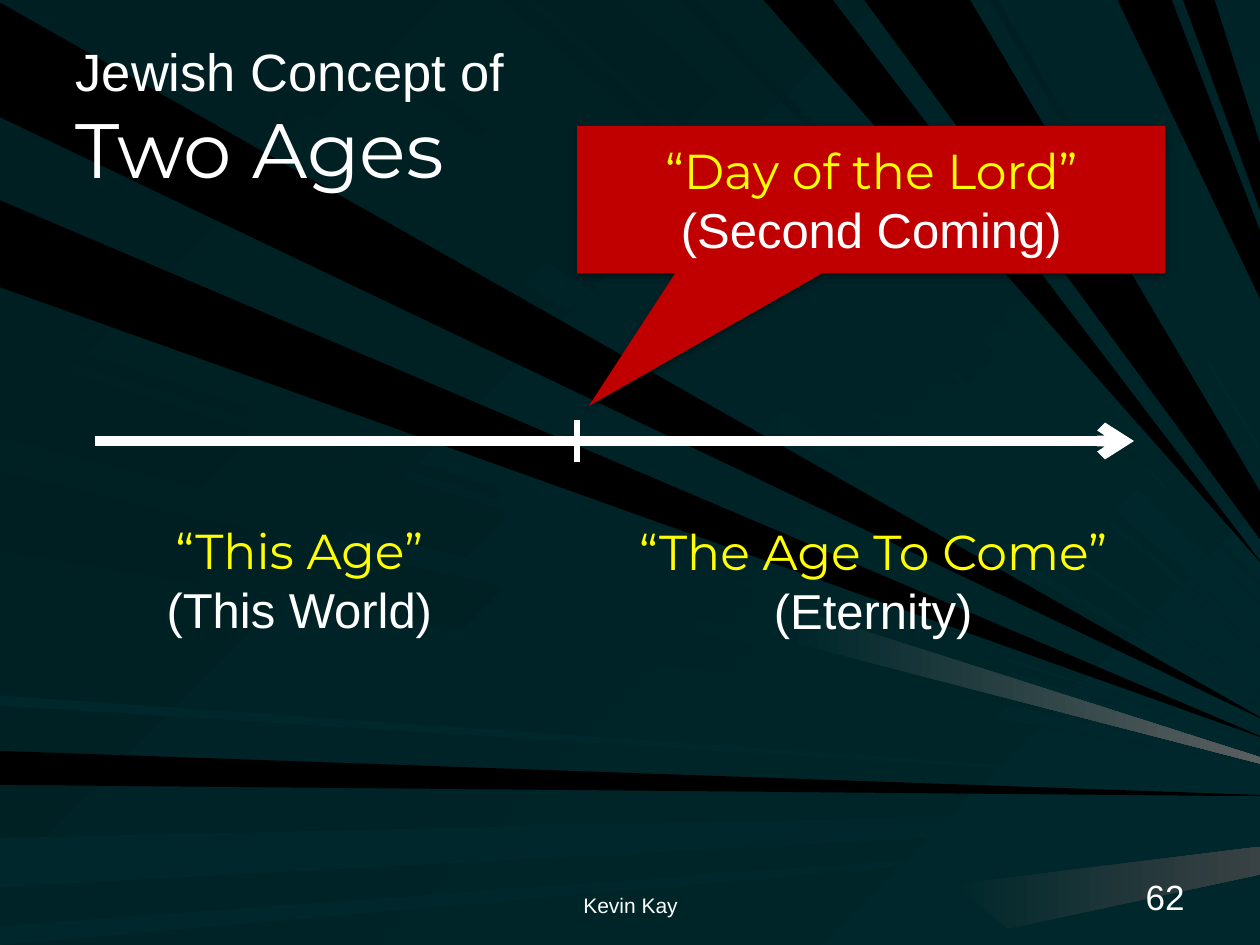
from lxml import etree
from pptx import Presentation
from pptx.dml.color import RGBColor
from pptx.enum.shapes import MSO_CONNECTOR as CONNECTOR, MSO_SHAPE as SHAPE
from pptx.enum.text import MSO_ANCHOR as ANCHOR, PP_ALIGN as ALIGN
from pptx.oxml import parse_xml
from pptx.oxml.ns import nsdecls, qn
from pptx.util import Pt

PX = 9144  # 100 px to the inch
WIDTH, HEIGHT = 1000, 750
color = RGBColor.from_string
BLACK, WHITE, YELLOW, RED = "000000", "FFFFFF", "FFFF00", "C00000"
DARK, TEAL, GLOW = "001F22", "00272B", "5A5F60"


def paint(fill, start, end, angle=45):
    """Fill with a gradient at a clockwise angle."""
    fill.gradient()
    fill.gradient_angle = (360 - angle) % 360
    for stop, value in zip(fill.gradient_stops, (start, end)):
        stop.color.rgb = color(value)


def write(shape, lines, align, anchor):
    """Put (text, font, size, colour) lines into one paragraph."""
    frame = shape.text_frame
    frame.word_wrap = True
    frame.vertical_anchor = anchor
    paragraph = frame.paragraphs[0]
    paragraph.alignment = align
    for index, (text, font, size, value) in enumerate(lines):
        if index:
            paragraph.add_line_break()
        run = paragraph.add_run()
        run.text = text
        run.font.name, run.font.size = font, Pt(size)
        run.font.color.rgb = color(value)


presentation = Presentation()
presentation.slide_width, presentation.slide_height = WIDTH * PX, HEIGHT * PX
slide = presentation.slides.add_slide(presentation.slide_layouts[5])
shapes = slide.shapes
title = shapes.title

# Background with rays that run from the left or top edge to the right edge:
# colour, start edge, span on the start edge, span on the right edge
paint(slide.background.fill, DARK, TEAL)
rays = [
    (BLACK, "left", 2, 93, 569, 570),
    (DARK, "top", 26, 101, 563, 562),
    (BLACK, "left", 596, 623, 631, 632),
    (TEAL, "left", 665, 704, 643, 651),
    (TEAL, "left", 735, 750, 662, 663),
    (DARK, "left", 258, 270, 588, 589),
    (BLACK, "left", 159, 228, 584, 585),
    (DARK, "top", 398, 416, 521, 515),
    (DARK, "top", 426, 492, 507, 479),
    (DARK, "top", 540, 552, 464, 463),
    (BLACK, "top", 606, 661, 446, 445),
    (BLACK, "top", 887, 930, 237, 183),
    (BLACK, "top", 939, 964, 167, 114),
    (DARK, "left", 278, 342, 596, 602),
    (DARK, "left", 374, 437, 605, 606),
    (TEAL, "left", 552, 560, 621, 623),
    (DARK, "top", 225, 247, 552, 547),
    (BLACK, "top", 686, 770, 428, 390),
    (DARK, "top", 785, 792, 360, 354),
    (DARK, "left", 283, 347, 601, 606),
]
polygons = []
for shade, edge, first, last, right_first, right_last in rays:
    starts = [(0, y) if edge == "left" else (y, 0) for y in (first, last)]
    ends = [(WIDTH, right_last), (WIDTH, right_first)]
    polygons.append((shade, BLACK if shade == BLACK else TEAL, starts + ends))

# Lighter glints near the right edge
polygons += [
    (TEAL, GLOW, [(637, 485), (633, 511), (WIDTH, 606), (WIDTH, 601)]),
    (TEAL, "394244", [(756, 702), (800, 737), (WIDTH, 694), (WIDTH, 672)]),
]
for start, end, corners in polygons:
    builder = shapes.build_freeform(*corners[0], scale=PX)
    builder.add_line_segments(corners[1:], close=True)
    ray = builder.convert_to_shape()
    ray.shadow.inherit = False
    ray.line.fill.background()
    paint(ray.fill, start, end, 0 if start == TEAL else 45)

# Title, in front of the rays
shapes._spTree.append(title._element)
title.left, title.top, title.width, title.height = 50 * PX, 30 * PX, 900 * PX, 125 * PX
write(title, [("Jewish Concept of", "Arial", 30, WHITE), ("Two Ages", "Montserrat", 44, WHITE)],
      ALIGN.LEFT, ANCHOR.MIDDLE)

# Time line with its arrowhead, and the tick between the ages
for x1, y1, x2, y2, width, head in [(75, 350, 900, 350, 6, "arrow"), (458, 333, 458, 367, 3, None)]:
    line = shapes.add_connector(CONNECTOR.STRAIGHT, x1 * PX, y1 * PX, x2 * PX, y2 * PX)
    line.line.color.rgb = color(WHITE)
    line.line.width = Pt(width)
    if head:
        etree.SubElement(line.line._get_or_add_ln(), qn("a:tailEnd"), type=head)
    etree.SubElement(line._element.spPr, qn("a:effectLst"))

# Callout for the turning point
callout = shapes.add_shape(SHAPE.RECTANGULAR_CALLOUT, 458 * PX, 100 * PX, 467 * PX, 117 * PX)
callout.adjustments[0], callout.adjustments[1] = -0.48, 1.4
callout.fill.solid()
callout.fill.fore_color.rgb = color(RED)
callout.line.fill.background()
callout._element.spPr.append(parse_xml(
    f'<a:effectLst {nsdecls("a")}><a:outerShdw blurRad="{Pt(3.5)}" dist="{Pt(2.2)}" dir="5400000" '
    f'rotWithShape="0"><a:srgbClr val="{BLACK}"><a:alpha val="32000"/></a:srgbClr>'
    '</a:outerShdw></a:effectLst>'))

# Names of the ages, and of the day between them
this_age = shapes.add_textbox(100 * PX, 408 * PX, 275 * PX, 104 * PX)
age_to_come = shapes.add_textbox(462 * PX, 409 * PX, 462 * PX, 104 * PX)
for shape, name, meaning, anchor in [
    (this_age, "“This Age”", "(This World)", ANCHOR.TOP),
    (age_to_come, "“The Age To Come”", "(Eternity)", ANCHOR.TOP),
    (callout, "“Day of the Lord”", "(Second Coming)", ANCHOR.MIDDLE),
]:
    write(shape, [(name, "Montserrat", 28, YELLOW), (meaning, "Arial", 28, WHITE)],
          ALIGN.CENTER, anchor)

# Footer and slide number
for text, left, width, size, align in [
    ("Kevin Kay", 342, 317, 12, ALIGN.CENTER),
    ("62", 717, 233, 20, ALIGN.RIGHT),
]:
    box = shapes.add_textbox(left * PX, 683 * PX, width * PX, 50 * PX)
    write(box, [(text, "Arial", size, WHITE)], align, ANCHOR.BOTTOM)

presentation.save("out.pptx")
